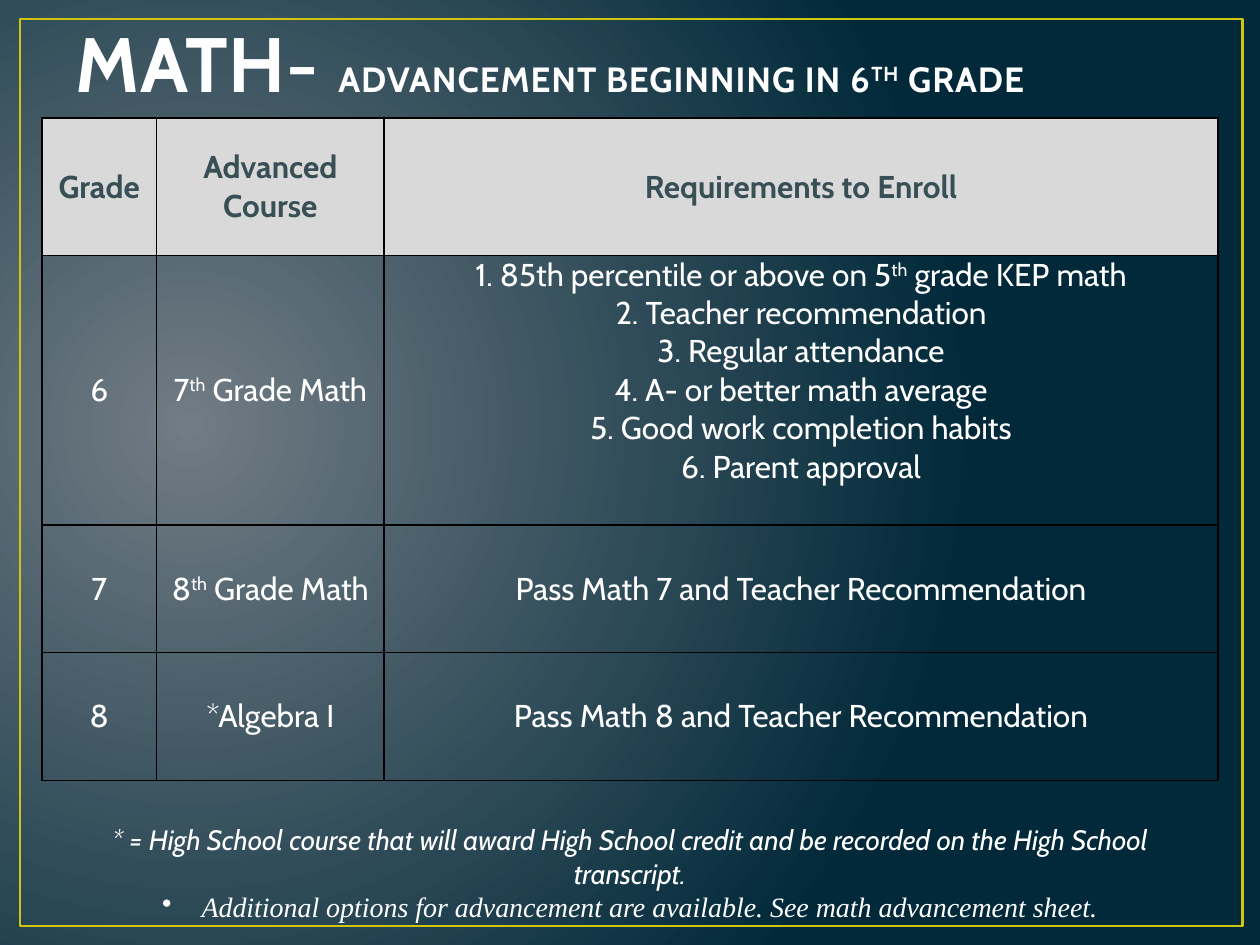
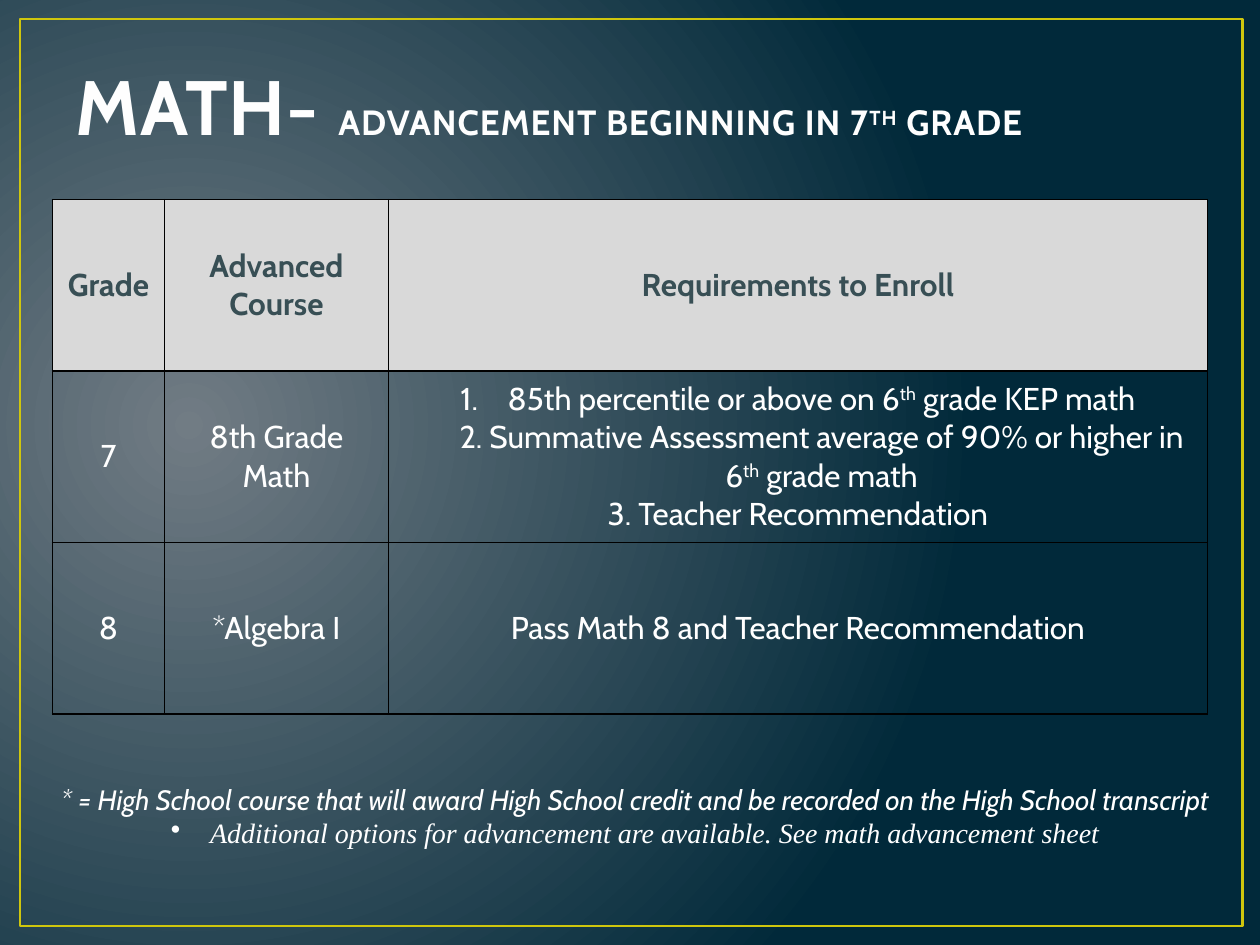
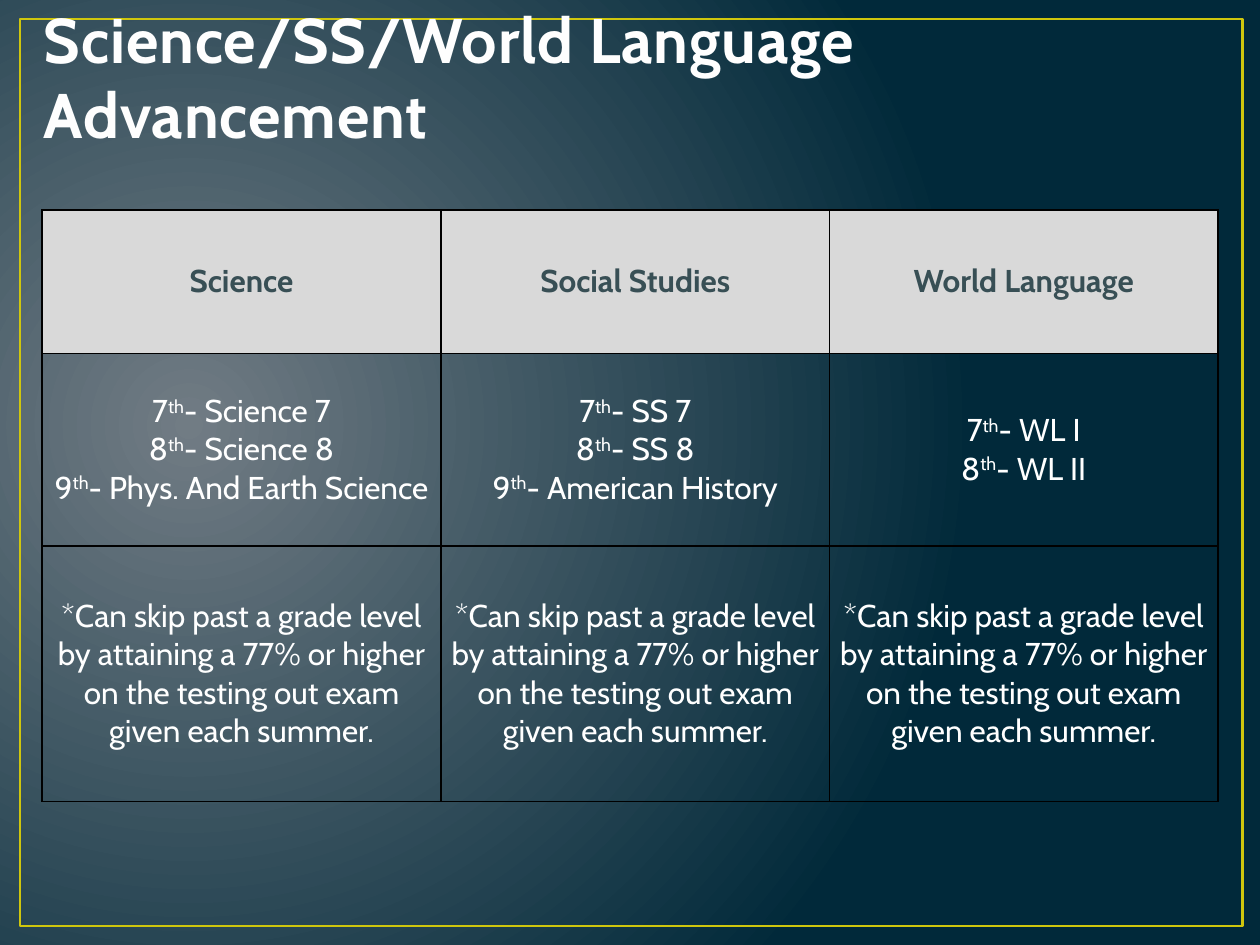
from pptx import Presentation
from pptx.dml.color import RGBColor
from pptx.enum.shapes import MSO_SHAPE
from pptx.enum.text import MSO_ANCHOR, PP_ALIGN
from pptx.oxml import parse_xml
from pptx.oxml.ns import nsdecls, qn
from pptx.util import Pt

RECT = MSO_SHAPE.RECTANGLE
MIDDLE, BOTTOM = MSO_ANCHOR.MIDDLE, MSO_ANCHOR.BOTTOM
CENTER = PP_ALIGN.CENTER

FONT, SERIF = "Cabin", "Times New Roman"
WHITE, PALE, SLATE = "FFFFFF", "FEFEFE", "384F55"
GOLD, GREY, BLACK = "CFC60D", "D9D9D9", "000000"
GLOW, NAVY = "717C84", "01293A"

HEADS = ["Grade", "Advanced Course", "Requirements to Enroll"]
ALGEBRA = ["8", "*Algebra I", "Pass Math 8 and Teacher Recommendation"]
CREDIT = ("* = High School course that will award High School credit "
          "and be recorded on the High School transcript")
OPTIONS = ("Additional options for advancement are available. "
           "See math advancement sheet")
SKIP = ("*Can skip past a grade level by attaining a 77% or higher "
        "on the testing out exam given each summer.")


def color(code):
    return RGBColor.from_string(code)


def node(xml):
    """Parse an element of the drawing namespace."""
    head, mark, tail = xml.partition(">")
    close = "/" if head.endswith("/") else ""
    return parse_xml(f"{head.rstrip('/')} {nsdecls('a')}{close}{mark}{tail}")


def solid(code):
    return f'<a:solidFill><a:srgbClr val="{code}"/></a:solidFill>'


def write(para, text, size=18, ink=WHITE, font=FONT, bold=False, italic=False,
          space=0, edge=None):
    """Add text; ^ encloses superscript and a newline breaks the line."""
    for row, line in enumerate(text.split("\n")):
        if row:
            para.add_line_break()
        for part, words in enumerate(line.split("^")):
            if not words:
                continue
            run = para.add_run()
            run.text = words
            run.font.name, run.font.size = font, Pt(size)
            run.font.bold, run.font.italic = bold, italic
            run.font.color.rgb = color(ink)
            props = run._r.get_or_add_rPr()
            if part % 2:
                props.set("baseline", "30000")
            if space:
                props.set("spc", str(round(space * 100)))
            if edge:
                props.insert(0, node(f'<a:ln w="{Pt(1.05)}">{solid(edge)}</a:ln>'))


def bullet(para, mark, indent):
    props = para._p.get_or_add_pPr()
    props.set("marL", str(Pt(indent)))
    props.set("indent", str(-Pt(indent)))
    props.append(node(mark))


def paint(master):
    """Give the master its radial background."""
    master.background.fill.background()
    props = master.element.find(".//" + qn("p:bgPr"))
    stops = "".join(f'<a:gs pos="{pos}"><a:srgbClr val="{code}"/></a:gs>'
                    for pos, code in ((0, GLOW), (100000, NAVY)))
    props.replace(props[0], node(
        f'<a:gradFill rotWithShape="1"><a:gsLst>{stops}</a:gsLst>'
        '<a:path path="circle"><a:fillToRect l="15000" t="50000" '
        'r="85000" b="60000"/></a:path></a:gradFill>'))


def start(deck):
    """Add a slide with the gold frame."""
    slide = deck.slides.add_slide(deck.slide_layouts[6])
    frame = slide.shapes.add_shape(RECT, Pt(11.5), Pt(10.8), Pt(698.4), Pt(518.4))
    frame.shadow.inherit = False
    frame.fill.background()
    frame.line.color.rgb = color(GOLD)
    frame.line.width = Pt(1.5)
    return slide


def box(slide, left, top, width, height):
    frame = slide.shapes.add_textbox(
        Pt(left), Pt(top), Pt(width), Pt(height)).text_frame
    frame.word_wrap = True
    return frame


def title(slide, place, *parts):
    """Add a title from pairs of text and size."""
    frame = box(slide, *place)
    frame.vertical_anchor = BOTTOM
    for text, size in parts:
        write(frame.paragraphs[0], text, size=size, ink=PALE, bold=True,
              space=0.5, edge=SLATE)


def fill_cell(cell, text, head):
    cell.vertical_anchor = MIDDLE
    cell.margin_left = cell.margin_right = Pt(5)
    cell.margin_top = cell.margin_bottom = 0
    props = cell._tc.get_or_add_tcPr()
    for side in "LRTB":
        props.append(node(f'<a:ln{side} w="{Pt(1)}">{solid(BLACK)}</a:ln{side}>'))
    if head:
        cell.fill.solid()
        cell.fill.fore_color.rgb = color(GREY)
    else:
        cell.fill.background()
    paras = [text] if isinstance(text, str) else text
    for num, words in enumerate(paras):
        frame = cell.text_frame
        para = frame.add_paragraph() if num else frame.paragraphs[0]
        para.alignment = CENTER
        write(para, words, ink=SLATE if head else WHITE, bold=head)


def grid(slide, left, top, cols, rows, cells):
    """Add a table from column widths, row heights and cell texts."""
    table = slide.shapes.add_table(
        len(rows), len(cols), Pt(left), Pt(top), Pt(sum(cols)), Pt(sum(rows))).table
    table.first_row = table.horz_banding = False
    for col, width in zip(table.columns, cols):
        col.width = Pt(width)
    for num, (row, height) in enumerate(zip(table.rows, rows)):
        row.height = Pt(height)
        for cell, text in zip(row.cells, cells[num]):
            fill_cell(cell, text, num == 0)
    return table


def notice(slide, place, end=""):
    """Add the two closing lines, each ended by the given mark."""
    frame = box(slide, *place)
    first, second = frame.paragraphs[0], frame.add_paragraph()
    for para, text, font in ((first, CREDIT, FONT), (second, OPTIONS, SERIF)):
        para.alignment = CENTER
        write(para, text + end, size=16, font=font, italic=True)
    bullet(second, '<a:buChar char="•"/>', 22.5)


def sixth(deck):
    slide = start(deck)
    title(slide, (36, 2.5, 648, 62.5), ("MATH- ", 44),
          ("ADVANCEMENT BEGINNING IN 6^TH^ GRADE", 20))
    needs = ("1. 85th percentile or above on 5^th^ grade KEP math\n"
             "2. Teacher recommendation\n3. Regular attendance\n"
             "4. A- or better math average\n5. Good work completion habits\n"
             "6. Parent approval")
    table = grid(slide, 24, 67.5, [65.5, 130, 476.5], [78.5, 154, 73, 73], [
        HEADS,
        ["6", "7^th^ Grade Math", needs],
        ["7", "8^th^ Grade Math", "Pass Math 7 and Teacher Recommendation"],
        ALGEBRA])
    table.cell(1, 2).margin_bottom = Pt(22)
    notice(slide, (24, 466.5, 672, 46), ".")


def seventh(deck):
    slide = start(deck)
    title(slide, (36, 21.6, 648, 68.4), ("MATH- ", 44),
          ("ADVANCEMENT BEGINNING IN 7^TH^ GRADE", 20))
    needs = ["85th percentile or above on 6^th^ grade KEP math\n"
             "2. Summative Assessment average of 90% or higher in "
             "6^th^ grade math", "3. Teacher Recommendation"]
    table = grid(slide, 30, 114, [64, 128, 468], [98] * 3, [
        HEADS, ["7", "8th Grade Math", needs], ALGEBRA])
    bullet(table.cell(1, 2).text_frame.paragraphs[0],
           '<a:buAutoNum type="arabicPeriod"/>', 27)
    notice(slide, (18, 443.5, 690, 46))


def others(deck):
    slide = start(deck)
    title(slide, (18, 21.6, 690, 68.4),
          ("Science/SS/World Language Advancement", 36))
    grid(slide, 24, 120, [228, 222, 222], [82, 110, 146], [
        ["Science", "Social Studies", "World Language"],
        [["7^th^- Science 7", "8^th^- Science 8",
          "9^th^- Phys. And Earth Science"],
         ["7^th^- SS 7", "8^th^- SS 8", "9^th^- American History"],
         ["7^th^- WL I", "8^th^- WL II"]],
        [SKIP] * 3])


def main():
    deck = Presentation()
    deck.slide_width, deck.slide_height = Pt(720), Pt(540)
    paint(deck.slide_master)
    sixth(deck)
    seventh(deck)
    others(deck)
    deck.save("out.pptx")


if __name__ == "__main__":
    main()
